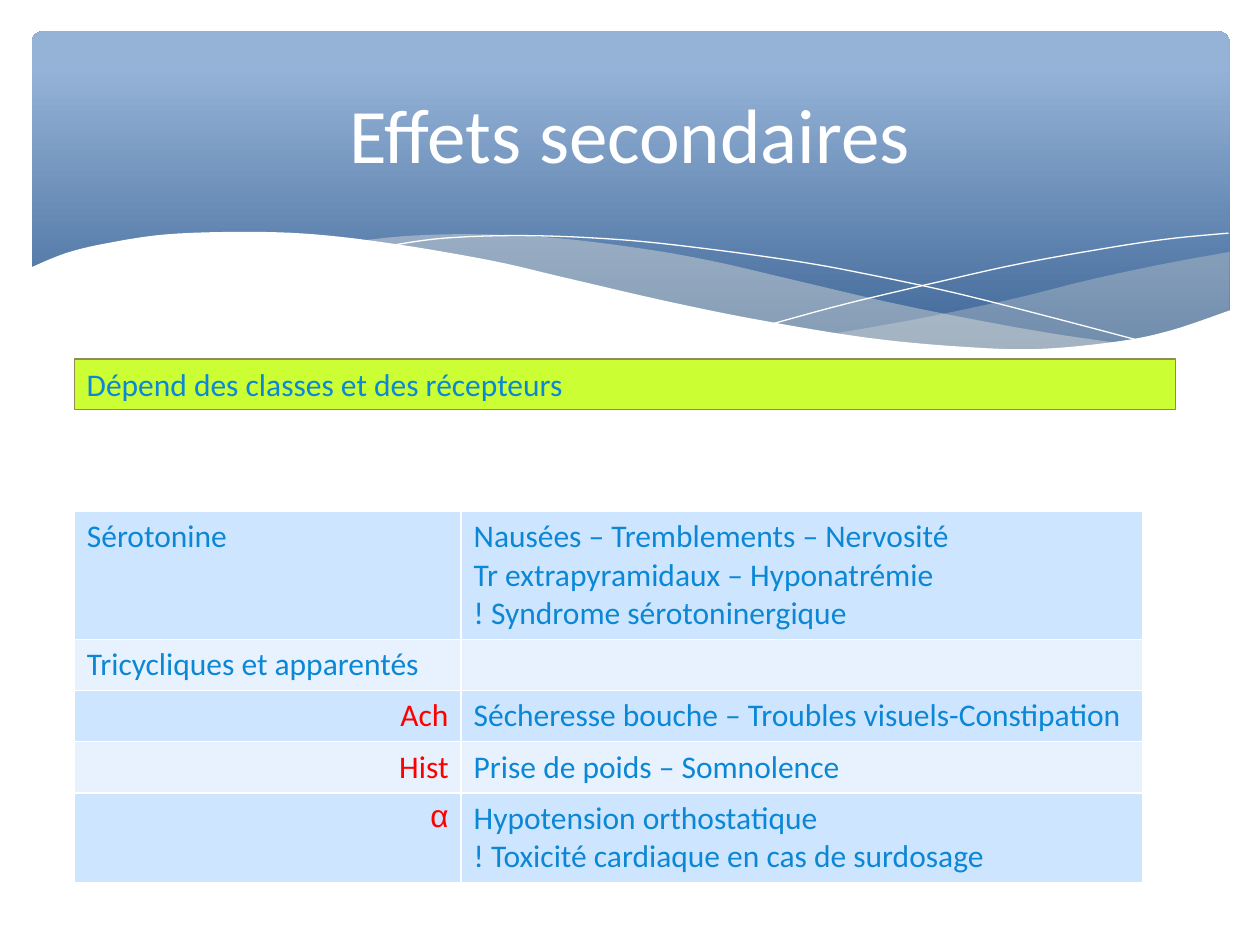
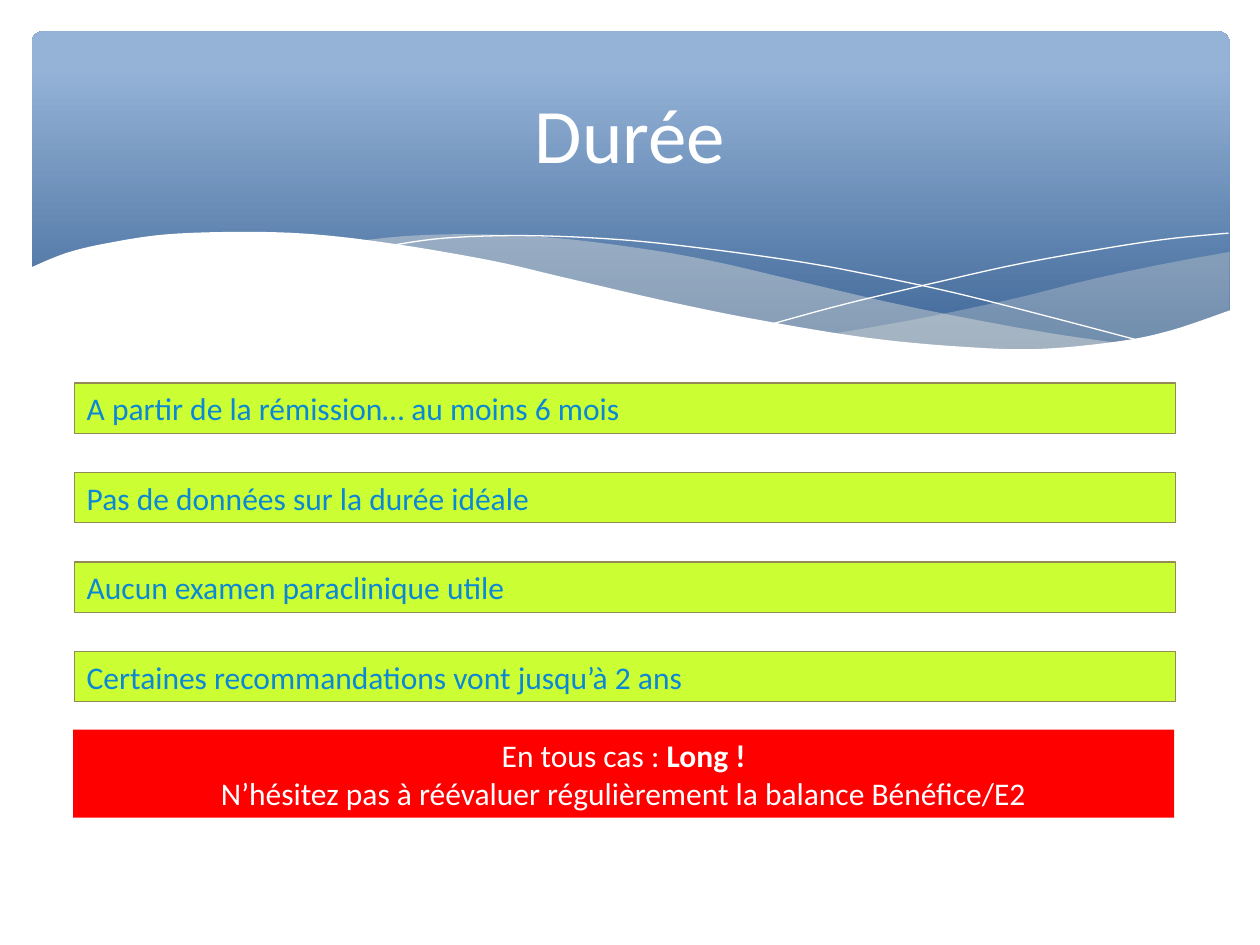
from lxml import etree
from pptx import Presentation
from pptx.dml.color import RGBColor
from pptx.enum.shapes import MSO_SHAPE
from pptx.enum.text import MSO_ANCHOR, PP_ALIGN
from pptx.oxml.ns import qn
from pptx.util import Inches, Pt

LEFT, CENTER, RIGHT = PP_ALIGN.LEFT, PP_ALIGN.CENTER, PP_ALIGN.RIGHT
TOP, MIDDLE = MSO_ANCHOR.TOP, MSO_ANCHOR.MIDDLE
RECTANGLE, ROUNDED = MSO_SHAPE.RECTANGLE, MSO_SHAPE.ROUNDED_RECTANGLE

FONT = "Calibri"
WHITE, BLUE, RED = "FFFFFF", "0B87D6", "FF0000"
LIME, OLIVE, SAND = "CCFF33", "948A54", "EEECE1"
BAND_DARK, BAND_LIGHT = "376092", "95B3D7"
ROW_COLORS = ("CDE5FE", "E7F2FE")
BOX_LEFT, BOX_WIDTH = 0.59, 8.74

WAVE_EDGE = [
    (0.23, 2.13), (0.52, 2.01), (0.85, 1.93), (1.32, 1.86), (1.93, 1.84), (2.5, 1.86),
    (3.16, 1.94), (3.91, 2.07), (4.47, 2.2), (5.29, 2.39), (6.03, 2.54), (6.88, 2.68),
    (7.61, 2.75), (8.23, 2.77), (8.87, 2.71), (9.3, 2.62), (9.77, 2.46),
]
RIGHT_RIBBON_TOP = [
    (6.61, 2.65), (7.29, 2.53), (8.05, 2.37), (8.61, 2.23), (9.21, 2.1), (9.76, 2),
]
RIGHT_RIBBON_BOTTOM = [
    (9.76, 2.47), (9.42, 2.59), (9.05, 2.69), (8.54, 2.76), (8.03, 2.78), (7.45, 2.75),
    (6.61, 2.65),
]
LONG_RIBBON_TOP = [
    (2.86, 1.91), (3.28, 1.87), (3.8, 1.86), (4.42, 1.89), (5.14, 1.98), (5.69, 2.08),
    (6.29, 2.22), (7.06, 2.4), (7.75, 2.54), (8.37, 2.65), (8.93, 2.73),
]
LONG_RIBBON_BOTTOM = [
    (8.93, 2.73), (8.48, 2.77), (7.96, 2.78), (7.36, 2.75), (6.65, 2.66), (5.84, 2.52),
    (5.3, 2.4), (4.49, 2.22), (3.83, 2.07), (3.42, 1.99), (2.86, 1.91),
]
FALLING_LINE = [
    (3.09, 1.95), (3.53, 1.89), (4.16, 1.87), (4.89, 1.9), (5.57, 1.97), (6.36, 2.08),
    (6.95, 2.19), (7.6, 2.33), (8.31, 2.51), (9.07, 2.71),
]
RISING_LINE = [
    (6.13, 2.57), (6.72, 2.41), (7.48, 2.23), (8.06, 2.1), (8.66, 1.99), (9.24, 1.9),
    (9.75, 1.85),
]

SIDE_EFFECTS = [
    (1, "Sérotonine", ["Nausées – Tremblements – Nervosité",
                       "Tr extrapyramidaux – Hyponatrémie",
                       "! Syndrome sérotoninergique"]),
    (0.4, "Tricycliques et apparentés", []),
    (0.4, "Ach", ["Sécheresse bouche – Troubles visuels-Constipation"]),
    (0.4, "Hist", ["Prise de poids – Somnolence"]),
    (0.7, "α", ["Hypotension orthostatique",
                "! Toxicité cardiaque en cas de surdosage"]),
]
RECEPTORS = ("Ach", "Hist", "α")

DURATION_POINTS = [
    "A partir de la rémission… au moins 6 mois",
    "Pas de données sur la durée idéale",
    "Aucun examen paraclinique utile",
    "Certaines recommandations vont jusqu’à 2 ans",
]


def color(value):
    return RGBColor.from_string(value)


def paint(shape, fill=None, line=None, opacity=None):
    shape.shadow.inherit = False
    if fill:
        shape.fill.solid()
        shape.fill.fore_color.rgb = color(fill)
    else:
        shape.fill.background()
    if opacity:
        tint = shape.element.spPr.find(qn("a:solidFill"))[0]
        etree.SubElement(tint, qn("a:alpha")).set("val", str(opacity * 1000))
    if line:
        shape.line.color.rgb = color(line)
        shape.line.width = Pt(0.75)
    else:
        shape.line.fill.background()


def write(frame, lines, ink=BLUE, size=18, align=LEFT, font=FONT):
    for index, spans in enumerate(lines):
        para = frame.paragraphs[0] if index == 0 else frame.add_paragraph()
        para.alignment = align
        for text, bold in spans:
            span = para.add_run()
            span.text = text
            span.font.name = font
            span.font.size = Pt(size)
            span.font.bold = bold
            span.font.color.rgb = color(ink)


def plain(*lines):
    return [[(line, False)] for line in lines]


def smooth(knots, steps=6):
    padded = [knots[0], *knots, knots[-1]]
    curve = [knots[0]]
    for before, start, end, after in zip(padded, padded[1:], padded[2:], padded[3:]):
        for step in range(1, steps + 1):
            t = step / steps
            curve.append(tuple(
                (2 * b + (c - a) * t + (2 * a - 5 * b + 4 * c - d) * t ** 2
                 + (3 * b - a - 3 * c + d) * t ** 3) / 2
                for a, b, c, d in zip(before, start, end, after)))
    return curve


def add_outline(page, points, closed=True, **style):
    spots = [(Inches(x), Inches(y)) for x, y in points]
    builder = page.shapes.build_freeform(*spots[0])
    builder.add_line_segments(spots[1:], close=closed)
    paint(builder.convert_to_shape(), **style)


def add_band(page):
    band = page.shapes.add_shape(
        ROUNDED, Inches(0.25), Inches(0.25), Inches(9.51), Inches(2.7))
    band.adjustments[0] = 0.034
    paint(band)
    band.fill.gradient()
    band.fill.gradient_angle = 90
    stops = zip(band.fill.gradient_stops, (0, 0.9), (BAND_DARK, BAND_LIGHT))
    for stop, position, tone in stops:
        stop.position = position
        stop.color.rgb = color(tone)
    add_outline(page, smooth(RIGHT_RIBBON_TOP) + smooth(RIGHT_RIBBON_BOTTOM),
                fill=SAND, opacity=29)
    add_outline(page, smooth(LONG_RIBBON_TOP) + smooth(LONG_RIBBON_BOTTOM),
                fill=SAND, opacity=40)
    for knots in (FALLING_LINE, RISING_LINE):
        add_outline(page, smooth(knots), closed=False, line=WHITE)
    add_outline(page, smooth(WAVE_EDGE) + [(9.77, 3.29), (0.23, 3.29)], fill=WHITE)


def move_to_layout(page, layout):
    decorations = [shape for shape in page.shapes if not shape.is_placeholder]
    for index, shape in enumerate(decorations):
        shape.element.nvSpPr.cNvPr.set("id", str(100 + index))
        layout.shapes.element.insert(2 + index, shape.element)


def add_title(page, text):
    title = page.shapes.title
    title.left, title.top = Inches(0.5), Inches(0.37)
    title.width, title.height = Inches(9), Inches(1.37)
    title.text_frame.vertical_anchor = MIDDLE
    write(title.text_frame, plain(text), ink=WHITE, size=44, align=CENTER)


def add_box(page, top, lines, left=BOX_LEFT, height=0.4, fill=LIME, line=OLIVE,
            ink=BLUE, align=LEFT):
    box = page.shapes.add_shape(
        RECTANGLE, Inches(left), Inches(top), Inches(BOX_WIDTH), Inches(height))
    paint(box, fill=fill, line=line)
    box.text_frame.word_wrap = True
    box.text_frame.vertical_anchor = TOP
    write(box.text_frame, lines, ink=ink, align=align)


def style_cell(cell, fill):
    properties = cell._tc.get_or_add_tcPr()
    for side in ("a:lnL", "a:lnR", "a:lnT", "a:lnB"):
        border = etree.SubElement(properties, qn(side), w=str(Pt(0.96)))
        solid = etree.SubElement(border, qn("a:solidFill"))
        etree.SubElement(solid, qn("a:srgbClr"), val=WHITE)
    cell.fill.solid()
    cell.fill.fore_color.rgb = color(fill)


def add_effects_table(page):
    widths = (3.07, 5.41)
    total = sum(height for height, _, _ in SIDE_EFFECTS)
    table = page.shapes.add_table(
        len(SIDE_EFFECTS), len(widths), Inches(BOX_LEFT), Inches(4.06),
        Inches(sum(widths)), Inches(total)).table
    table.first_row = table.horz_banding = False
    for column, width in zip(table.columns, widths):
        column.width = Inches(width)
    for index, (height, source, effects) in enumerate(SIDE_EFFECTS):
        table.rows[index].height = Inches(height)
        source_cell, effects_cell = table.rows[index].cells
        for cell in (source_cell, effects_cell):
            style_cell(cell, ROW_COLORS[index % 2])
        receptor = source in RECEPTORS
        write(source_cell.text_frame, plain(source),
              ink=RED if receptor else BLUE, align=RIGHT if receptor else LEFT,
              font="Arial" if source == "α" else FONT)
        write(effects_cell.text_frame, plain(*effects))


def main():
    deck = Presentation()
    deck.slide_width, deck.slide_height = Inches(10), Inches(7.5)
    layout = deck.slide_layouts[5]

    page = deck.slides.add_slide(layout)
    add_band(page)
    move_to_layout(page, layout)
    add_title(page, "Effets secondaires")
    add_box(page, 2.85, plain("Dépend des classes et des récepteurs"))
    add_effects_table(page)

    page = deck.slides.add_slide(layout)
    add_title(page, "Durée")
    for index, point in enumerate(DURATION_POINTS):
        add_box(page, 3.04 + 0.71 * index, plain(point))
    conclusion = [
        [("En tous cas : ", False), ("Long !", True)],
        [("N’hésitez pas à réévaluer régulièrement la balance Bénéfice/E2", False)],
    ]
    add_box(page, 5.79, conclusion, left=0.58, height=0.7, fill=RED, line=None,
            ink=WHITE, align=CENTER)

    deck.save("out.pptx")


if __name__ == "__main__":
    main()
